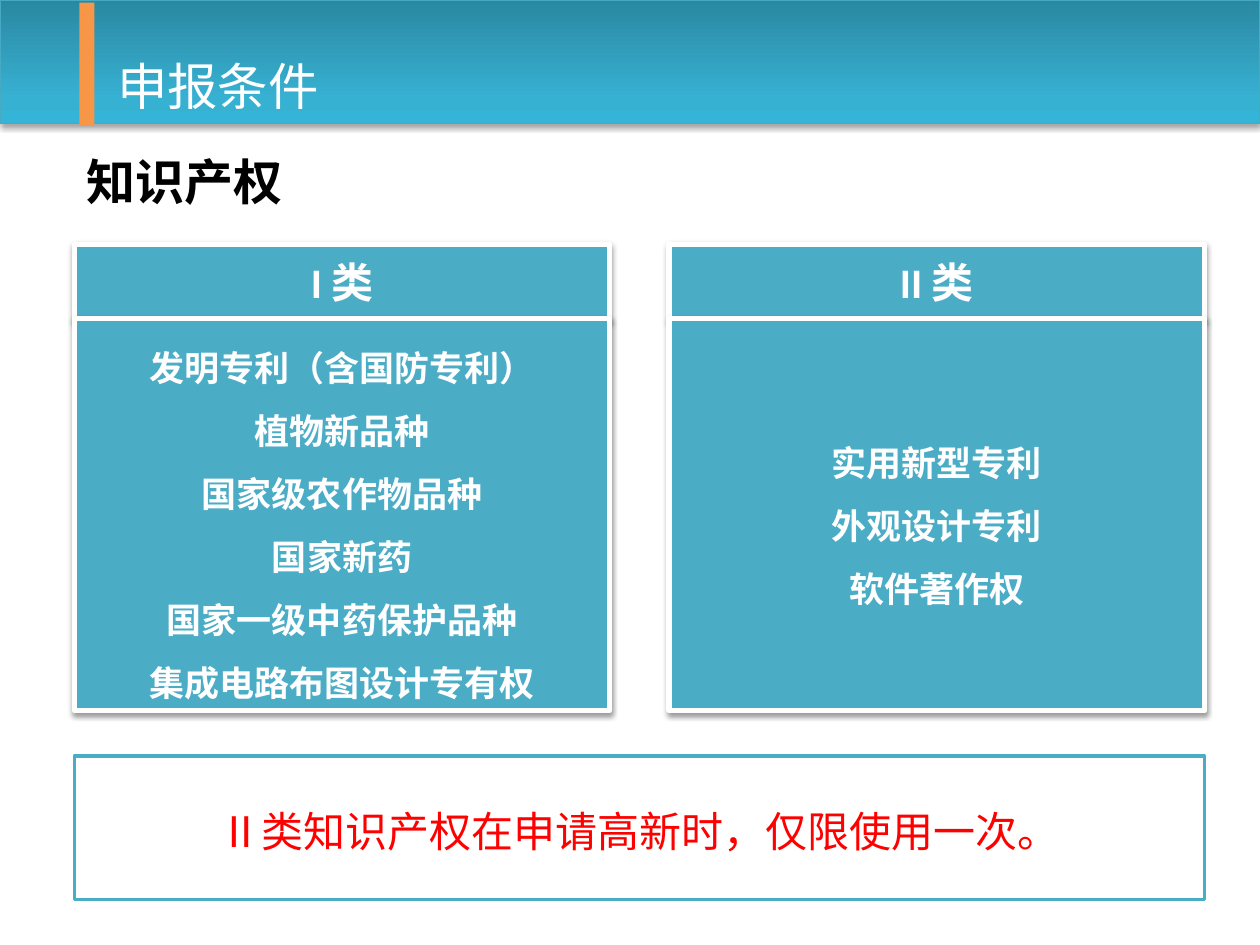
from lxml.etree import SubElement
from copy import deepcopy
from pptx import Presentation
from pptx.dml.color import RGBColor
from pptx.enum.shapes import MSO_SHAPE
from pptx.enum.text import MSO_ANCHOR, MSO_AUTO_SIZE, PP_ALIGN
from pptx.oxml.ns import qn
from pptx.util import Inches, Pt

COLORS = {
    "teal": "4BACC6", "band_top": "2A88A2", "band_mid": "37B1D2",
    "band_end": "34B4D6", "band_line": "46AAC5", "orange": "F79646",
    "white": "FFFFFF", "black": "000000", "red": "FF0000",
}
LATIN, CJK = "Calibri", "Noto Sans CJK SC"
WIDTH, HEIGHT = 10, 7.5
MARGIN, CARD_W, PITCH = 0.59, 4.25, 4.72
CARDS = [
    ("I 类", ["发明专利（含国防专利）", "植物新品种", "国家级农作物品种",
             "国家新药", "国家一级中药保护品种", "集成电路布图设计专有权"]),
    ("II 类", ["实用新型专利", "外观设计专利", "软件著作权"]),
]


def rgb(name):
    return RGBColor.from_string(COLORS[name])


def add_box(shapes, box, fill=None, line=None, width=0):
    sp = shapes.add_shape(MSO_SHAPE.RECTANGLE, *map(Inches, box))
    sp.shadow.inherit = False
    if fill:
        sp.fill.solid()
        sp.fill.fore_color.rgb = rgb(fill)
    if line:
        sp.line.color.rgb = rgb(line)
        sp.line.width = Pt(width)
    else:
        sp.line.fill.background()
    return sp


def add_shadow(sp, alpha, dist):
    effects = sp.element.spPr.find(qn("a:effectLst"))
    shadow = SubElement(effects, qn("a:outerShdw"), blurRad=str(Pt(3.1)),
                        dist=str(Pt(dist)), dir="5400000", rotWithShape="0")
    clr = SubElement(shadow, qn("a:srgbClr"), val=COLORS["black"])
    SubElement(clr, qn("a:alpha"), val=str(alpha * 1000))


def write(tf, lines, size, color, font=LATIN, bold=False,
          align=PP_ALIGN.CENTER, spacing=None):
    tf.vertical_anchor = MSO_ANCHOR.MIDDLE
    for i, text in enumerate(lines):
        p = tf.add_paragraph() if i else tf.paragraphs[0]
        p.alignment = align
        p.line_spacing = spacing
        r = p.add_run()
        r.text = text
        r.font.size = Pt(size)
        r.font.bold = bold
        r.font.name = font
        r.font.color.rgb = rgb(color)
        if font == CJK:
            SubElement(r.font._element, qn("a:ea"), typeface=font)


def header(s, box, title):
    x, y, w, h = box
    band = add_box(s.shapes, box, line="band_line", width=0.75)
    band.fill.gradient()
    band.fill.gradient_angle = 270
    first = band.fill.gradient_stops[0]._gs
    first.addnext(deepcopy(first))
    stops = [("band_top", 0), ("band_mid", 0.8), ("band_end", 1)]
    for stop, (color, position) in zip(band.fill.gradient_stops, stops):
        stop.color.rgb = rgb(color)
        stop.position = position
    add_shadow(band, 35, 1.8)

    sp = s.shapes.title
    band.element.addnext(sp.element)
    sp.left, sp.top, sp.width, sp.height = map(
        Inches, (x + 0.83, y + 0.44, 3.39, 0.47))
    sp.text_frame.auto_size = MSO_AUTO_SIZE.NONE
    write(sp.text_frame, [title], 28.8, "white", CJK, align=PP_ALIGN.LEFT)
    add_box(s.shapes, (x + 0.63, y + 0.02, 0.12, h), "orange")


def subtitle(s, box, text):
    tf = s.shapes.add_textbox(*map(Inches, box)).text_frame
    tf.word_wrap = False
    write(tf, [text], 28, "black", bold=True, align=PP_ALIGN.LEFT)


def card(s, box, heading, items):
    x, y, w, h = box
    head_h = 0.59
    group = s.shapes.add_group_shape()
    parts = [
        ((x, y, w, head_h), [heading], 24, None),
        ((x, y + head_h, w, h - head_h), items, 20, 1.5),
    ]
    for area, lines, size, spacing in parts:
        sp = add_box(group.shapes, area, "teal", "white", 3)
        add_shadow(sp, 38, 1.6)
        write(sp.text_frame, lines, size, "white", bold=True, spacing=spacing)


def note(s, box, text):
    sp = add_box(s.shapes, box, "white", "teal", 2)
    sp.text_frame.margin_top = Inches(0.1)
    write(sp.text_frame, [text], 24, "red", CJK)


def main():
    prs = Presentation()
    prs.slide_width, prs.slide_height = Inches(WIDTH), Inches(HEIGHT)
    s = prs.slides.add_slide(prs.slide_layouts[5])
    header(s, (0, 0, WIDTH, 0.98), "申报条件")
    subtitle(s, (MARGIN, 1.15, 1.78, 0.57), "知识产权")
    for i, (heading, items) in enumerate(CARDS):
        card(s, (MARGIN + i * PITCH, 1.94, CARD_W, 3.7), heading, items)
    note(s, (MARGIN, 6, PITCH + CARD_W, 1.14),
         "Ⅱ类知识产权在申请高新时，仅限使用一次。")
    prs.save("out.pptx")


if __name__ == "__main__":
    main()
